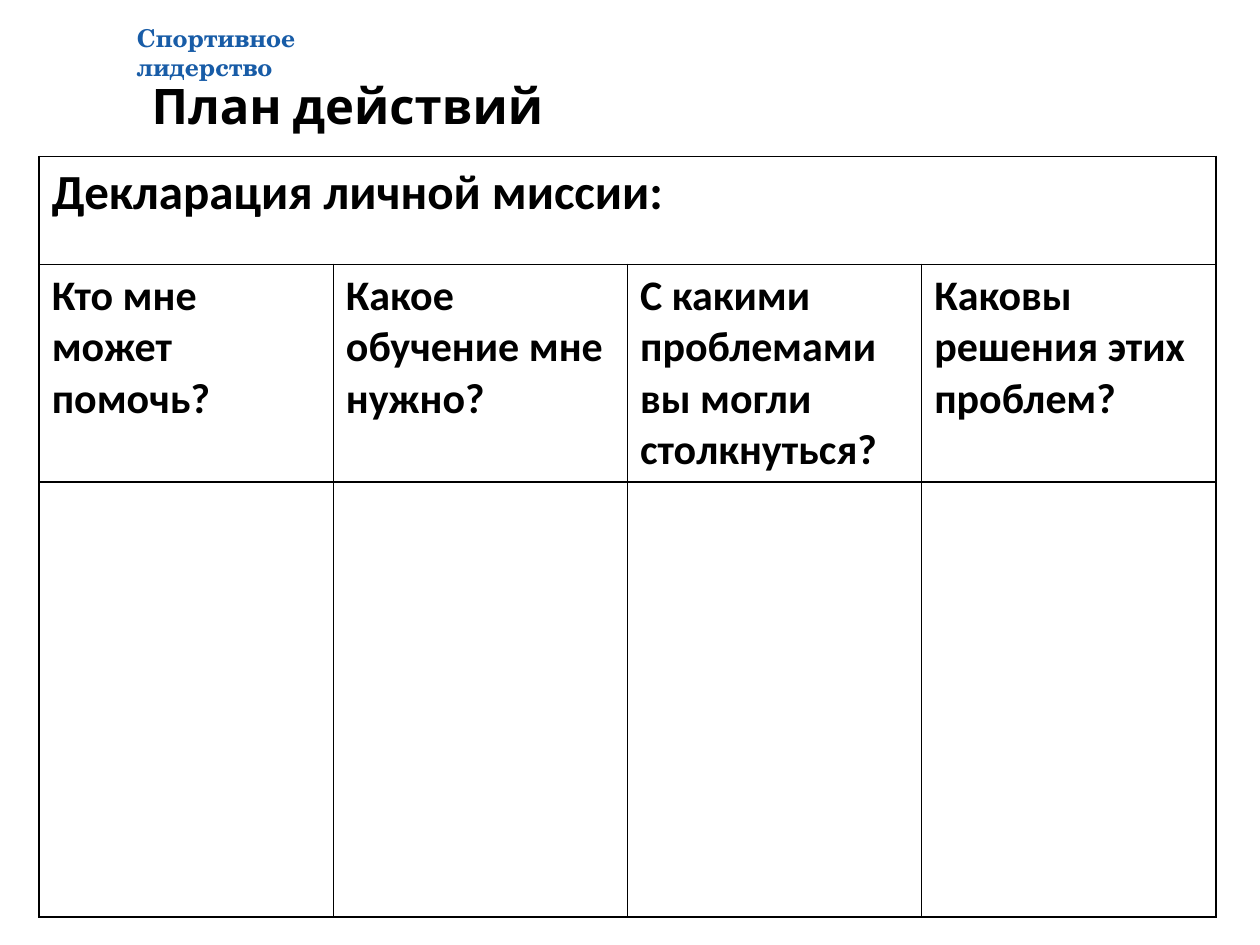
from lxml import etree
from pptx import Presentation
from pptx.dml.color import RGBColor
from pptx.enum.text import MSO_ANCHOR
from pptx.oxml.ns import qn
from pptx.util import Cm, Pt

BLACK = RGBColor(0x00, 0x00, 0x00)
BLUE = RGBColor(0x18, 0x5C, 0xA7)
TOP = MSO_ANCHOR.TOP
BORDER_WIDTH = Pt(0.96)

MISSION = "Декларация личной миссии:"
QUESTIONS = [
    "Кто мне может помочь?",
    "Какое обучение мне нужно?",
    "С какими проблемами вы могли столкнуться?",
    "Каковы решения этих проблем?",
]
ROW_HEIGHTS = (2.18, 4.39, 8.77)


def write(tf, text, size=24, font="Calibri", color=BLACK, bold=True):
    tf.word_wrap = True
    r = tf.paragraphs[0].add_run()
    r.text = text
    r.font.size = Pt(size)
    r.font.name = font
    r.font.bold = bold
    r.font.color.rgb = color


def add_label(s, x, y, w, h, text, **fmt):
    tf = s.shapes.add_textbox(Cm(x), Cm(y), Cm(w), Cm(h)).text_frame
    tf.vertical_anchor = TOP
    write(tf, text, **fmt)


def set_borders(cell):
    tc_pr = cell._tc.get_or_add_tcPr()
    for i, side in enumerate(("a:lnL", "a:lnR", "a:lnT", "a:lnB")):
        ln = etree.Element(qn(side), w=str(BORDER_WIDTH))
        fill = etree.SubElement(ln, qn("a:solidFill"))
        etree.SubElement(fill, qn("a:srgbClr"), val=str(BLACK))
        tc_pr.insert(i, ln)  # borders come before the fill


def add_header(s, x, y):
    # Programme name above the slide title
    add_label(s, x + 0.3, y + 1.07, 16.54, 0.81, "План действий",
              size=28, font="Cabin")
    add_label(s, x, y, 5.66, 0.84, "Спортивное лидерство",
              size=14, font="TeX Gyre Schola", color=BLUE)


def add_plan_table(s, x, y, w):
    frame = s.shapes.add_table(len(ROW_HEIGHTS), len(QUESTIONS), Cm(x), Cm(y),
                               Cm(w), Cm(sum(ROW_HEIGHTS)))
    table = frame.table
    table.first_row = table.horz_banding = False
    for row, height in zip(table.rows, ROW_HEIGHTS):
        row.height = Cm(height)
    for cell in table.iter_cells():
        cell.fill.background()
        set_borders(cell)

    # Mission statement across the full width, then one question per column
    table.cell(0, 0).merge(table.cell(0, len(QUESTIONS) - 1))
    write(table.cell(0, 0).text_frame, MISSION, size=28)
    for col, question in enumerate(QUESTIONS):
        write(table.cell(1, col).text_frame, question)


def main():
    prs = Presentation()
    prs.slide_width, prs.slide_height = Cm(25.4), Cm(19.05)
    s = prs.slides.add_slide(prs.slide_layouts[6])
    add_plan_table(s, 0.79, 3.15, 23.72)
    add_header(s, 2.51, 0.33)
    prs.save("out.pptx")


if __name__ == "__main__":
    main()
